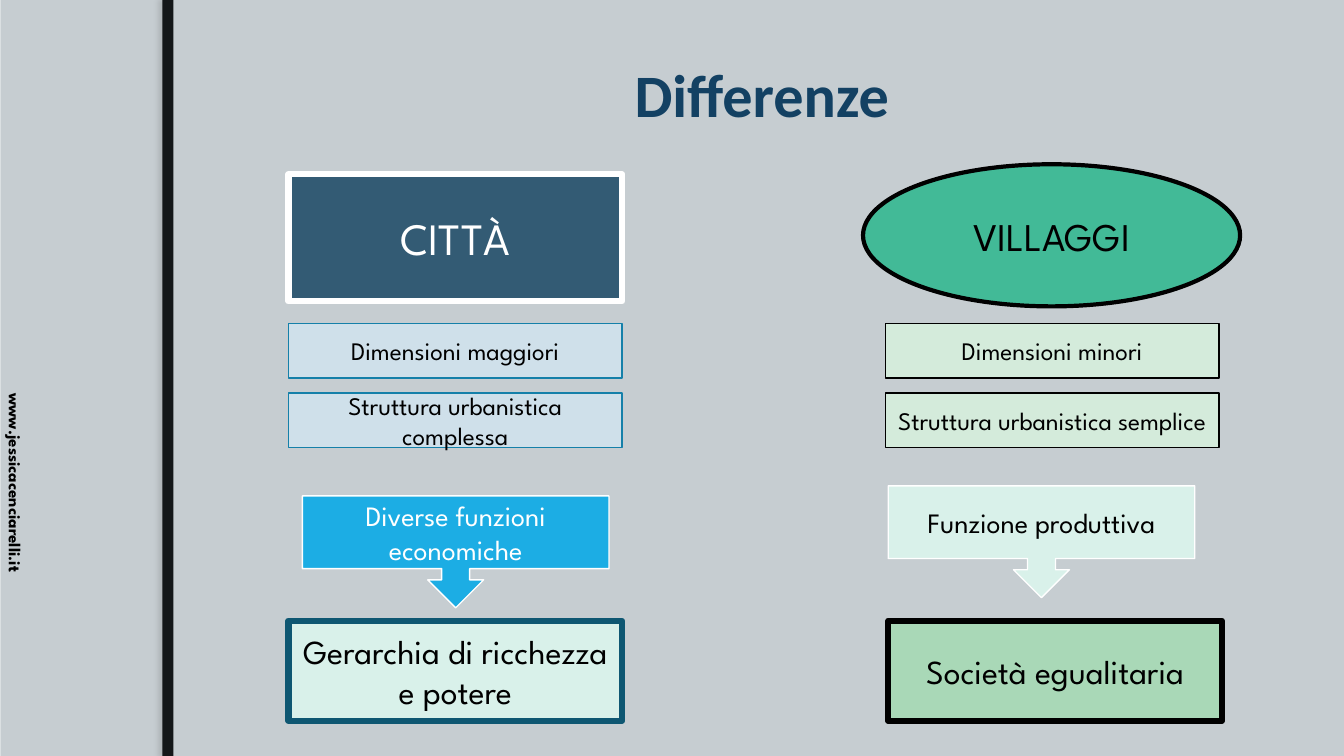
from lxml import etree
from pptx import Presentation
from pptx.dml.color import RGBColor
from pptx.enum import shapes, text
from pptx.oxml import ns
from pptx.util import Inches, Pt

COLORS = {
    "backdrop": "DFE3E5", "panel": "C6CDD1", "bar": "141719", "shadow": "6F7172",
    "title": "134163", "black": "000000", "white": "FFFFFF",
    "slate": "335B74", "teal": "42BA97", "mint": "D9F1EA", "petrol": "0E5772",
    "green": "A9D8B7", "pale green": "D4EBDB", "sky": "1CADE4",
    "pale blue": "CFE0EA", "blue": "1580A9",
}
BODY_FONT = "League Spartan"
RECT = shapes.MSO_SHAPE.RECTANGLE
OVAL = shapes.MSO_SHAPE.OVAL
CALLOUT = shapes.MSO_SHAPE.DOWN_ARROW_CALLOUT


def write(box, words, size, color, name=BODY_FONT, bold=False):
    """Put one centred paragraph in the middle of a box."""
    frame = box.text_frame
    frame.word_wrap = True
    frame.vertical_anchor = text.MSO_ANCHOR.MIDDLE
    para = frame.paragraphs[0]
    para.alignment = text.PP_ALIGN.CENTER
    span = para.add_run()
    span.text = words
    for key, value in {"size": Pt(size), "name": name, "bold": bold}.items():
        setattr(span.font, key, value)
    span.font.color.rgb = RGBColor.from_string(COLORS[color])


def add_block(kind, place, fill, line=None, weight=0):
    """Add a filled shape, outlined only when a line colour is given."""
    block = page.shapes.add_shape(kind, *map(Inches, place))
    block.shadow.inherit = False
    block.fill.solid()
    block.fill.fore_color.rgb = RGBColor.from_string(COLORS[fill])
    if line:
        block.line.color.rgb = RGBColor.from_string(COLORS[line])
        block.line.width = Pt(weight)
    else:
        block.line.fill.background()
    return block


deck = Presentation()
deck.slide_width, deck.slide_height = Inches(13.33), Inches(7.5)
page = deck.slides.add_slide(deck.slide_layouts[6])
page.background.fill.solid()
page.background.fill.fore_color.rgb = RGBColor.from_string(COLORS["backdrop"])

# Backdrop panel and the vertical bar with its soft shadow
add_block(RECT, (0.01, 0, 13.33, 7.5), "panel")
bar = add_block(RECT, (1.61, 0, 0.11, 7.5), "bar")
effects = bar._element.spPr.find(ns.qn("a:effectLst"))
shadow = etree.SubElement(effects, ns.qn("a:outerShdw"), blurRad=str(Pt(3)),
                          dist=str(Pt(3)), dir=str(180 * 60000), rotWithShape="0")
tint = etree.SubElement(shadow, ns.qn("a:srgbClr"), val=COLORS["shadow"])
etree.SubElement(tint, ns.qn("a:alpha"), val="25000")

# Side address and title
address = page.shapes.add_textbox(*map(Inches, (-1.41, 4.64, 3.13, 0.3)))
address.rotation = 90
write(address, "www.jessicacenciarelli.it", 12, "black", bold=True)
title = page.shapes.add_textbox(*map(Inches, (2.09, 0.3, 10.93, 1.25)))
write(title, "Differenze", 43, "title", name="Calibri", bold=True)

# Headings, arrow callouts and conclusions:
# kind, place, fill, line, weight, words, size, text colour
blocks = [
    (RECT, (2.86, 1.73, 3.31, 1.26), "slate", "white", 4.5, "CITTÀ", 32, "white"),
    (OVAL, (8.56, 1.63, 3.74, 1.41), "teal", "black", 3, "VILLAGGI", 28, "black"),
    (RECT, (2.86, 6.16, 3.31, 0.99), "mint", "petrol", 4.5,
     "Gerarchia di ricchezza e potere", 24, "black"),
    (RECT, (8.81, 6.16, 3.31, 0.99), "green", "black", 4.5,
     "Società egualitaria", 24, "black"),
    (CALLOUT, (3, 4.92, 3.04, 1.11), "sky", "white", 1,
     "Diverse funzioni economiche", 20, "white"),
    (CALLOUT, (8.81, 4.82, 3.04, 1.11), "mint", "white", 1,
     "Funzione produttiva", 20, "black"),
]
for kind, place, fill, line, weight, words, size, color in blocks:
    write(add_block(kind, place, fill, line, weight), words, size, color)

# Two stacked features under each heading
features = [
    (2.86, "pale blue", "blue",
     ["Dimensioni maggiori", "Struttura urbanistica complessa"]),
    (8.78, "pale green", "black",
     ["Dimensioni minori", "Struttura urbanistica semplice"]),
]
for left, fill, line, labels in features:
    for row, label in enumerate(labels):
        feature = add_block(RECT, (left, 3.21 + 0.69 * row, 3.31, 0.54), fill, line, 1)
        write(feature, label, 18, "black")

deck.save("out.pptx")
